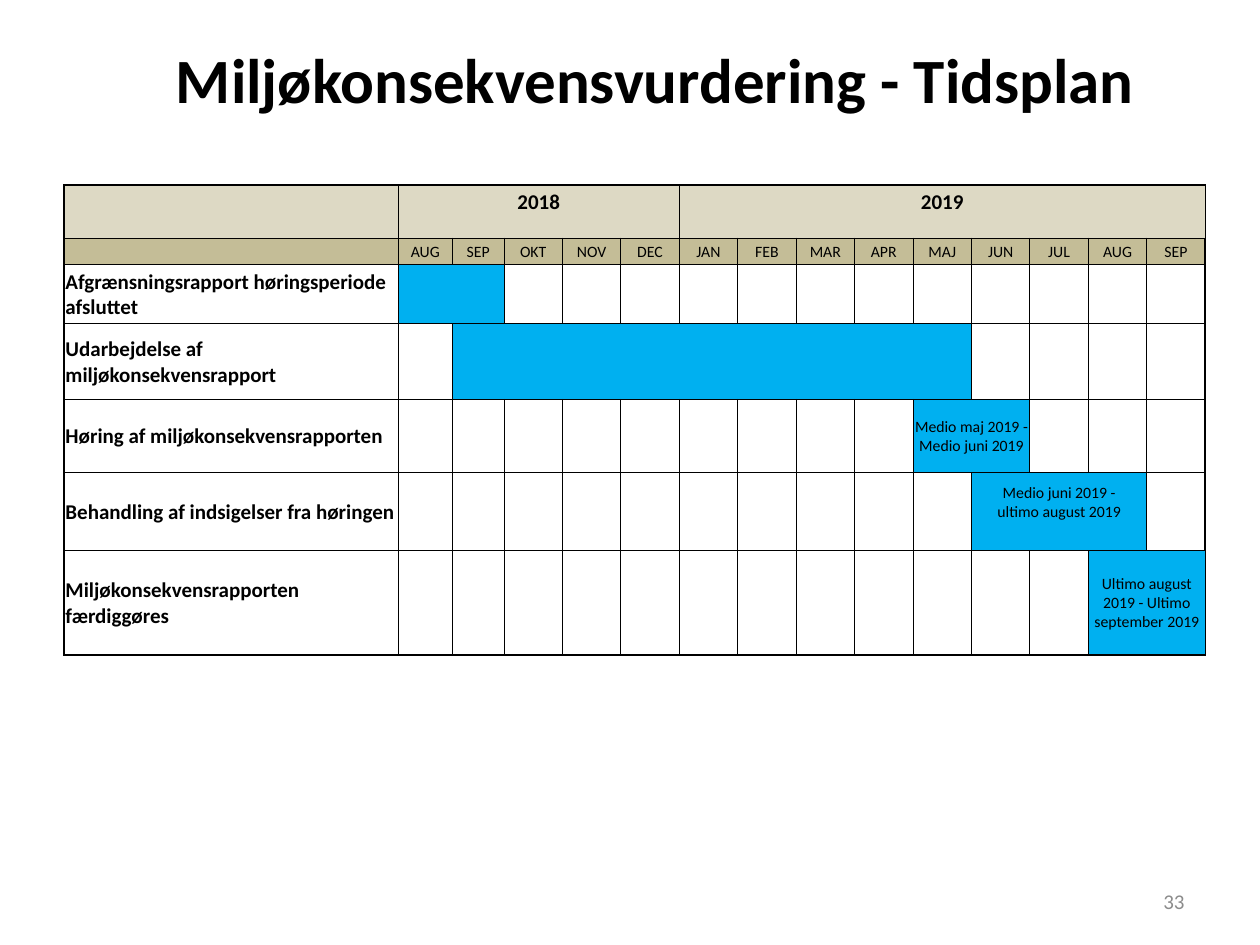
import lxml.etree
import pptx
import pptx.dml.color
import pptx.enum.text
import pptx.oxml.ns
import pptx.util

Inches = pptx.util.Inches
Pt = pptx.util.Pt
RGBColor = pptx.dml.color.RGBColor
PP_ALIGN = pptx.enum.text.PP_ALIGN
MSO_ANCHOR = pptx.enum.text.MSO_ANCHOR
qn = pptx.oxml.ns.qn

FONT = "Calibri"
BLACK = RGBColor(0x00, 0x00, 0x00)
GREY = RGBColor(0x8C, 0x8C, 0x8C)
YEAR_FILL = RGBColor(0xDD, 0xD9, 0xC4)
MONTH_FILL = RGBColor(0xC4, 0xBD, 0x97)
BAR_FILL = RGBColor(0x00, 0xB0, 0xF0)

COLUMN_WIDTHS = [2.65, 0.43, 0.41] + [5.57 / 12] * 12
ROW_HEIGHTS = [0.42, 0.21, 0.47, 0.6, 0.58, 0.62, 0.83]
YEARS = [("2018", 1, 5), ("2019", 6, 14)]
MONTHS = "AUG SEP OKT NOV DEC JAN FEB MAR APR MAJ JUN JUL AUG SEP".split()
TASKS = [
    ("Afgrænsningsrapport høringsperiode afsluttet", 1, 2, [], 0),
    ("Udarbejdelse af miljøkonsekvensrapport", 2, 10, [], 0),
    ("Høring af miljøkonsekvensrapporten", 10, 11,
     ["Medio maj 2019 -", "Medio juni 2019"], 0),
    ("Behandling af indsigelser fra høringen", 11, 13,
     ["Medio juni 2019 -", "ultimo august 2019"], 0.15),
    ("Miljøkonsekvensrapporten færdiggøres", 13, 14,
     ["Ultimo august 2019 - Ultimo september 2019"], 0),
]


def add_run(paragraph, text, size, color=BLACK, bold=False):
    """Append one formatted run to a paragraph."""
    run = paragraph.add_run()
    run.text = text
    run.font.name = FONT
    run.font.size = Pt(size)
    run.font.bold = bold
    run.font.color.rgb = color


def add_title(slide, text):
    """Fill and place the title placeholder."""
    title = slide.shapes.title
    title.left, title.top = Inches(0.75), Inches(0.44)
    title.width, title.height = Inches(8.9), Inches(0.79)
    frame = title.text_frame
    frame.word_wrap = True
    frame.auto_size = pptx.enum.text.MSO_AUTO_SIZE.NONE
    frame.vertical_anchor = MSO_ANCHOR.MIDDLE
    frame.margin_bottom = Inches(0.53)
    paragraph = frame.paragraphs[0]
    paragraph.alignment = PP_ALIGN.CENTER
    paragraph.line_spacing = 1.08
    add_run(paragraph, text, 36, bold=True)


def add_page_number(slide, text):
    """Add the page number at the lower right."""
    box = slide.shapes.add_textbox(Inches(7.17), Inches(6.95), Inches(2.33), Inches(0.4))
    frame = box.text_frame
    frame.word_wrap = True
    frame.vertical_anchor = MSO_ANCHOR.MIDDLE
    frame.paragraphs[0].alignment = PP_ALIGN.RIGHT
    add_run(frame.paragraphs[0], text, 12, GREY)


def set_borders(cell, widths):
    """Draw the left, right, top and bottom borders of a cell."""
    properties = cell._tc.get_or_add_tcPr()
    for side, width in zip("LRTB", widths):
        line = lxml.etree.SubElement(properties, qn(f"a:ln{side}"), w=str(Pt(width)))
        fill = lxml.etree.SubElement(line, qn("a:solidFill"))
        lxml.etree.SubElement(fill, qn("a:srgbClr"), val=str(BLACK))


def prepare_cell(table, row, column):
    """Give a cell its borders, insets, clear fill and small empty text."""
    cell = table.cell(row, column)
    last_row, last_column = len(ROW_HEIGHTS) - 1, len(COLUMN_WIDTHS) - 1
    outer_edges = (column == 0, column == last_column, row == 0, row == last_row)
    set_borders(cell, [1 if outer else 0.5 for outer in outer_edges])
    cell.fill.background()
    cell.margin_left = cell.margin_right = cell.margin_top = Inches(0.01)
    cell.margin_bottom = 0
    cell.vertical_anchor = MSO_ANCHOR.MIDDLE
    paragraph = cell.text_frame.paragraphs[0]
    lxml.etree.SubElement(paragraph._p, qn("a:endParaRPr"), sz="900")


def fill_cell(cell, color):
    """Give a cell a solid fill."""
    cell.fill.solid()
    cell.fill.fore_color.rgb = color


def write_cell(cell, lines, size, bold=False, alignment=PP_ALIGN.CENTER):
    """Write one paragraph per line into a cell."""
    frame = cell.text_frame
    for index, line in enumerate(lines):
        paragraph = frame.add_paragraph() if index else frame.paragraphs[0]
        paragraph.alignment = alignment
        add_run(paragraph, line, size, bold=bold)


def merge_cells(table, row, first, last, color):
    """Merge a stretch of a row, fill it and return its cell."""
    cell = table.cell(row, first)
    cell.merge(table.cell(row, last))
    fill_cell(cell, color)
    return cell


def add_schedule(slide):
    """Add the schedule table with its header rows and task bars."""
    table = slide.shapes.add_table(
        len(ROW_HEIGHTS), len(COLUMN_WIDTHS), Inches(0.51), Inches(1.47),
        Inches(sum(COLUMN_WIDTHS)), Inches(sum(ROW_HEIGHTS))).table
    table.first_row = table.horz_banding = False
    for column, width in zip(table.columns, COLUMN_WIDTHS):
        column.width = Inches(width)
    for row, height in zip(table.rows, ROW_HEIGHTS):
        row.height = Inches(height)
    for row in range(len(ROW_HEIGHTS)):
        for column in range(len(COLUMN_WIDTHS)):
            prepare_cell(table, row, column)

    fill_cell(table.cell(0, 0), YEAR_FILL)
    for year, first, last in YEARS:
        cell = merge_cells(table, 0, first, last, YEAR_FILL)
        cell.margin_bottom = Inches(0.15)
        write_cell(cell, [year], 12, bold=True)

    fill_cell(table.cell(1, 0), MONTH_FILL)
    for column, month in enumerate(MONTHS, start=1):
        cell = table.cell(1, column)
        fill_cell(cell, MONTH_FILL)
        write_cell(cell, [month], 9)

    for row, (task, first, last, lines, bottom) in enumerate(TASKS, start=2):
        write_cell(table.cell(row, 0), [task], 12, True, PP_ALIGN.LEFT)
        bar = merge_cells(table, row, first, last, BAR_FILL)
        bar.margin_bottom = Inches(bottom)
        write_cell(bar, lines, 9)


def main():
    """Build and save the schedule slide."""
    presentation = pptx.Presentation()
    presentation.slide_width, presentation.slide_height = Inches(10), Inches(7.5)
    slide = presentation.slides.add_slide(presentation.slide_layouts[5])
    add_title(slide, "Miljøkonsekvensvurdering - Tidsplan")
    add_schedule(slide)
    add_page_number(slide, "33")
    presentation.save("out.pptx")


if __name__ == "__main__":
    main()
